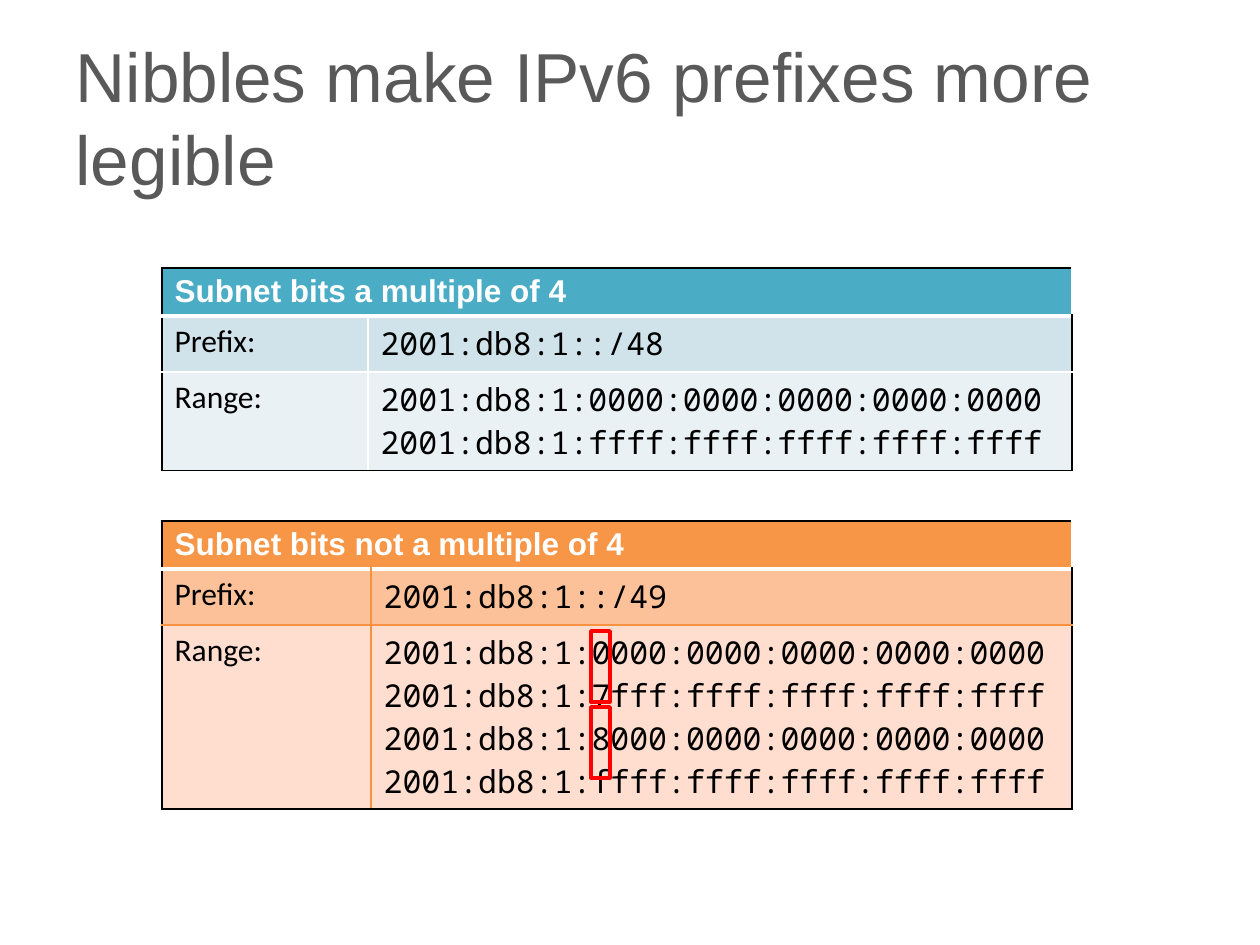
import pptx
import pptx.util
import pptx.dml.color
import pptx.enum.shapes
import pptx.enum.text
import lxml.etree
import pptx.oxml.ns

RGB = pptx.dml.color.RGBColor
GREY = RGB(0x59, 0x59, 0x59)
BLACK = RGB(0, 0, 0)
WHITE = RGB(255, 255, 255)
RED = RGB(255, 0, 0)
TEAL = RGB(0x4B, 0xAC, 0xC6)
MIST = RGB(0xD0, 0xE3, 0xEA)
PALE = RGB(0xE9, 0xF1, 0xF5)
ORANGE = RGB(0xF7, 0x96, 0x46)
RUST = RGB(0xF6, 0x92, 0x40)
PEACH = RGB(0xFC, 0xC1, 0x98)
CREAM = RGB(0xFF, 0xDE, 0xCF)


def px(*nums):
    return [pptx.util.Emu(n * 914400 // 126) for n in nums]


def edge(cell, side, color, width):
    props = cell._tc.get_or_add_tcPr()
    qn = pptx.oxml.ns.qn
    line = lxml.etree.SubElement(props, qn("a:ln" + side),
                                 w=str(int(pptx.util.Pt(width))))
    fill = lxml.etree.SubElement(line, qn("a:solidFill"))
    lxml.etree.SubElement(fill, qn("a:srgbClr"), val=str(color))


deck = pptx.Presentation()
deck.slide_width, deck.slide_height = px(1260, 945)
slide = deck.slides.add_slide(deck.slide_layouts[5])

# Title
title = slide.shapes.title
title.left, title.top, title.width, title.height = px(63, 38, 1134, 157)
frame = title.text_frame
frame.text = "Nibbles make IPv6 prefixes more legible"
frame.auto_size = pptx.enum.text.MSO_AUTO_SIZE.NONE
frame.vertical_anchor = pptx.enum.text.MSO_ANCHOR.MIDDLE
para = frame.paragraphs[0]
para.alignment = pptx.enum.text.PP_ALIGN.LEFT
para.font.name = "Arial"
para.font.size = pptx.util.Pt(39.6)
para.font.color.rgb = GREY

# Tables: top, column widths, row heights, row fills, header rule, inner line, text
tables = [
    (268, (206, 704), (48, 56, 98), (TEAL, MIST, PALE), 3, (WHITE, 1),
     "Subnet bits a multiple of 4", "2001:db8:1::/48",
     "2001:db8:1:0000:0000:0000:0000:0000\n"
     "2001:db8:1:ffff:ffff:ffff:ffff:ffff"),
    (521, (209, 701), (48, 56, 184), (ORANGE, PEACH, CREAM), 2, (RUST, 0.75),
     "Subnet bits not a multiple of 4", "2001:db8:1::/49",
     "2001:db8:1:0000:0000:0000:0000:0000\n"
     "2001:db8:1:7fff:ffff:ffff:ffff:ffff\n"
     "2001:db8:1:8000:0000:0000:0000:0000\n"
     "2001:db8:1:ffff:ffff:ffff:ffff:ffff"),
]
for top, wides, highs, fills, rule, inner, head, prefix, span in tables:
    box = px(162, top, sum(wides), sum(highs))
    grid = slide.shapes.add_table(3, 2, *box).table
    for col, wide in zip(grid.columns, px(*wides)):
        col.width = wide
    for row, high in zip(grid.rows, px(*highs)):
        row.height = high
    grid.cell(0, 0).merge(grid.cell(0, 1))

    texts = [(head, ""), ("Prefix:", prefix), ("Range:", span)]
    outer, under = (BLACK, 1), (WHITE, rule)
    levels = [outer, under, inner, outer]
    for r, pair in enumerate(texts):
        for c, text in enumerate(pair):
            cell = grid.cell(r, c)
            # Black frame, white rule below the header, thin lines inside
            if c == 0 or r > 0:
                edge(cell, "L", *(inner if c else outer))
            if c == 1 or r > 0:
                edge(cell, "R", *(outer if c else inner))
            edge(cell, "T", *levels[r])
            edge(cell, "B", *levels[r + 1])
            cell.fill.solid()
            cell.fill.fore_color.rgb = fills[r]
            if not text:
                continue
            cell.text = text
            for para in cell.text_frame.paragraphs:
                font = para.font
                font.size = pptx.util.Pt(18)
                font.bold = r == 0
                font.color.rgb = BLACK if r else WHITE
                font.name = ("Noto Sans Mono" if c else
                             "Calibri" if r else "Arial")

# Red frames around the differing nibble
for top in (631, 707):
    mark = slide.shapes.add_shape(pptx.enum.shapes.MSO_SHAPE.RECTANGLE,
                                  *px(591, top, 19, 71))
    mark.shadow.inherit = False
    mark.fill.background()
    mark.line.color.rgb = RED
    mark.line.width = pptx.util.Pt(2)

deck.save("out.pptx")
